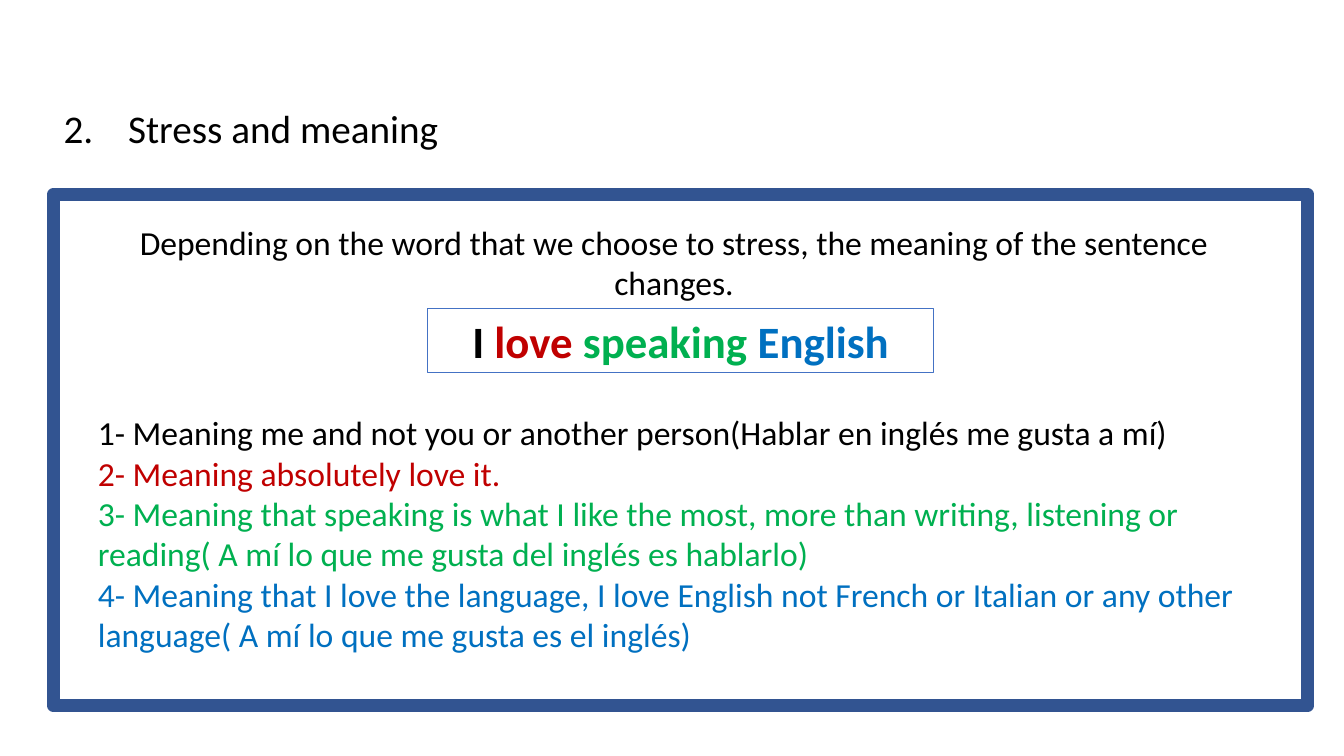
from lxml.etree import SubElement
from pptx import Presentation
from pptx.dml.color import RGBColor
from pptx.enum.shapes import MSO_SHAPE
from pptx.enum.text import MSO_ANCHOR, MSO_AUTO_SIZE, PP_ALIGN
from pptx.oxml.ns import qn
from pptx.util import Pt

EMU_PER_PX = 9144  # 100 px to the inch

BLACK = RGBColor(0x00, 0x00, 0x00)
RED = RGBColor(0xC0, 0x00, 0x00)
GREEN = RGBColor(0x00, 0xB0, 0x50)
BLUE = RGBColor(0x00, 0x70, 0xC0)
FRAME_BLUE = RGBColor(0x32, 0x54, 0x91)
THIN_BLUE = RGBColor(0x44, 0x72, 0xC4)

SENTENCE = [("I ", BLACK), ("love ", RED), ("speaking ", GREEN), ("English", BLUE)]
MEANINGS = [
    ("1- Meaning me and not you or another person(Hablar en inglés me gusta a mí)", BLACK),
    ("2- Meaning absolutely love it.", RED),
    ("3- Meaning that speaking is what I like the most, more than writing, "
     "listening or reading( A mí lo que me gusta del inglés es hablarlo)", GREEN),
    ("4- Meaning that I love the language, I love English not French or Italian "
     "or any other language( A mí lo que me gusta es el inglés)", BLUE),
]


def px(length):
    return length * EMU_PER_PX


def write(frame, paragraphs, size=24, bold=False, align=PP_ALIGN.LEFT,
          anchor=MSO_ANCHOR.TOP, spacing=1.0, indent=0, number=None):
    """Fill frame with paragraphs, each a list of (text, colour) runs."""
    frame.word_wrap = True
    frame.auto_size = MSO_AUTO_SIZE.NONE
    frame.vertical_anchor = anchor
    for index, runs in enumerate(paragraphs):
        paragraph = frame.add_paragraph() if index else frame.paragraphs[0]
        paragraph.alignment = align
        paragraph.line_spacing = spacing
        paragraph.space_before = Pt(0)
        properties = paragraph._p.get_or_add_pPr()
        properties.set("marL", str(px(indent)))
        properties.set("indent", str(-px(indent)))
        if number is None:
            SubElement(properties, qn("a:buNone"))
        else:
            SubElement(properties, qn("a:buAutoNum"),
                       type="arabicPeriod", startAt=str(number))
        for text, colour in runs:
            run = paragraph.add_run()
            run.text = text
            run.font.name = "Calibri"
            run.font.size = Pt(size)
            run.font.bold = bold
            run.font.color.rgb = colour


class LessonSlide:
    def __init__(self, presentation):
        self.slide = presentation.slides.add_slide(presentation.slide_layouts[1])

    def placeholder(self, index, box, paragraphs, **style):
        holder = self.slide.placeholders[index]
        holder.left, holder.top, holder.width, holder.height = map(px, box)
        write(holder.text_frame, paragraphs, **style)

    def outline(self, box, colour, weight):
        """Add an unfilled rectangle and return it."""
        rectangle = self.slide.shapes.add_shape(MSO_SHAPE.RECTANGLE, *map(px, box))
        rectangle.shadow.inherit = False
        rectangle.fill.background()
        rectangle.line.color.rgb = colour
        rectangle.line.width = Pt(weight)
        return rectangle

    def text_box(self, box, paragraphs, **style):
        area = self.slide.shapes.add_textbox(*map(px, box))
        write(area.text_frame, paragraphs, **style)


def main():
    presentation = Presentation()
    presentation.slide_width = px(1333)
    presentation.slide_height = px(750)
    lesson = LessonSlide(presentation)

    lesson.placeholder(0, (53, 104, 1228, 175), [[("Stress and meaning", BLACK)]],
                       size=28, spacing=0.9, indent=64, number=2)
    lesson.placeholder(1, (87, 404, 1176, 346), [[meaning] for meaning in MEANINGS])
    lesson.outline((53, 193, 1244, 507), FRAME_BLUE, 9.5)
    example = lesson.outline((424, 306, 502, 64), THIN_BLUE, 0.75)
    write(example.text_frame, [SENTENCE], size=32, bold=True,
          align=PP_ALIGN.CENTER, anchor=MSO_ANCHOR.MIDDLE)
    lesson.text_box((74, 215, 1189, 91),
                    [[("Depending on the word that we choose to stress, "
                       "the meaning of the sentence changes.", BLACK)]],
                    align=PP_ALIGN.CENTER)
    presentation.save("out.pptx")


if __name__ == "__main__":
    main()
